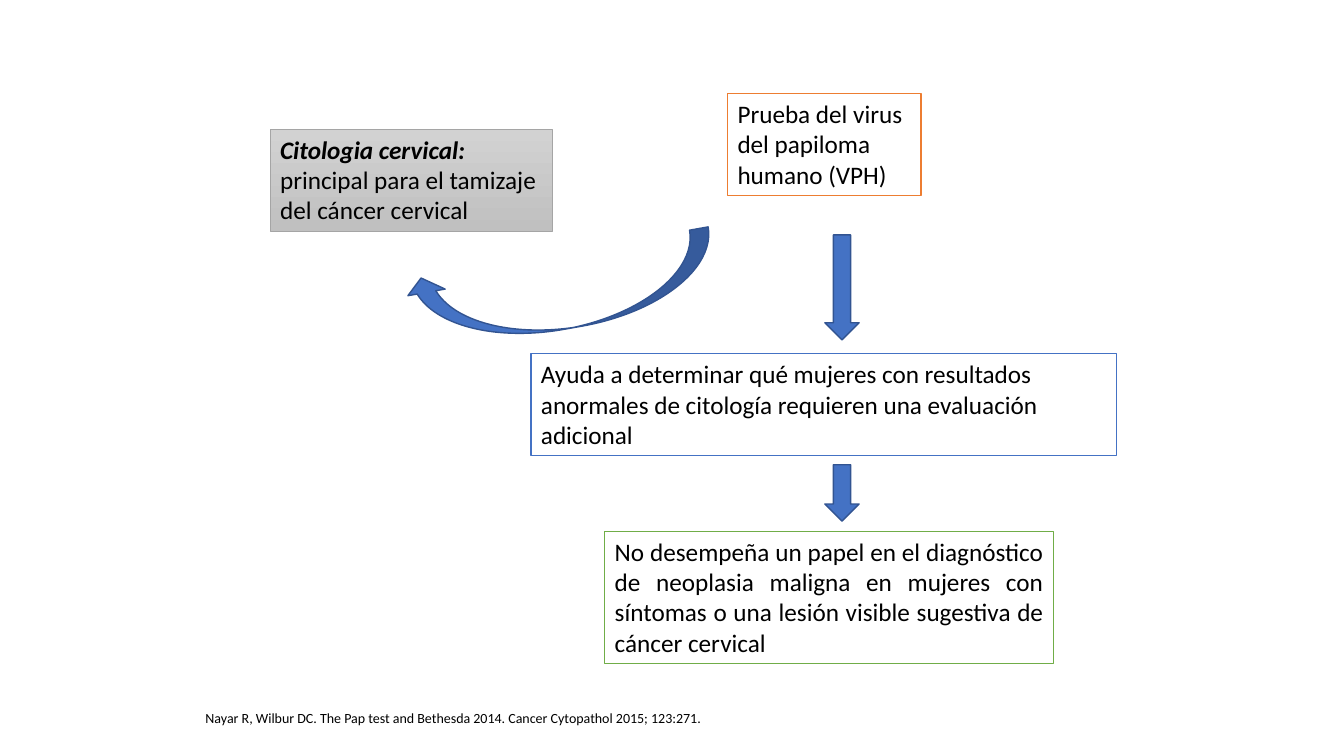
from pptx import Presentation
from pptx.dml.color import RGBColor as RGB
from pptx.enum.shapes import MSO_SHAPE as Form
from pptx.enum.text import MSO_ANCHOR as Anchor, MSO_AUTO_SIZE as Fit, PP_ALIGN as Align
from pptx.util import Pt


def hue(code):
    return RGB.from_string(code)


def write(par, text, size=18, bold=False, italic=False, align=Align.LEFT, color="000000"):
    par.alignment = align
    run = par.add_run()
    run.text = text
    font = run.font
    font.name, font.size = "Calibri", Pt(size)
    font.bold, font.italic = bold, italic
    font.color.rgb = hue(color)


class Board:
    """Draw the boxes, arrows and notes of one slide in a shared style."""

    blue, edge = "4472C4", "325491"

    def __init__(self, slide):
        self.shapes = slide.shapes

    def shape(self, form, area, line, width=1, fill="FFFFFF"):
        item = self.shapes.add_shape(form, *map(Pt, area))
        item.shadow.inherit = False
        item.fill.solid()
        item.fill.fore_color.rgb = hue(fill)
        item.line.color.rgb = hue(line)
        item.line.width = Pt(width)
        return item

    def frame(self, item):
        frame = item.text_frame
        frame.word_wrap = True
        frame.auto_size = Fit.SHAPE_TO_FIT_TEXT
        frame.vertical_anchor = Anchor.TOP
        return frame

    def box(self, area, line, text, width=1, **style):
        item = self.shape(Form.RECTANGLE, area, line, width)
        write(self.frame(item).paragraphs[0], text, **style)
        return item

    def shade(self, item, *tones):
        item.fill.gradient()
        item.fill.gradient_angle = 270
        for stop, tone in zip(item.fill.gradient_stops, tones):
            stop.color.rgb = hue(tone)

    def arrow(self, form, area, turn=0, bends=()):
        item = self.shape(form, area, self.edge, fill=self.blue)
        item.rotation = turn
        for i, bend in enumerate(bends):
            item.adjustments[i] = bend

    def note(self, area, text, **style):
        item = self.shapes.add_textbox(*map(Pt, area))
        write(self.frame(item).paragraphs[0], text, **style)


def main():
    deck = Presentation()
    deck.slide_width, deck.slide_height = Pt(960), Pt(540)
    board = Board(deck.slides.add_slide(deck.slide_layouts[6]))

    smear = board.box((193, 92.3, 201.6, 72.7), "A5A5A5", "Citologia cervical:",
                      width=0.5, bold=True, italic=True)
    board.shade(smear, "D2D2D2", "C0C0C0")
    write(smear.text_frame.add_paragraph(), "principal para el tamizaje del cáncer cervical")

    board.box((432, 379.5, 320.4, 94.5), "70AD47",
              "No desempeña un papel en el diagnóstico de neoplasia maligna en mujeres "
              "con síntomas o una lesión visible sugestiva de cáncer cervical",
              align=Align.JUSTIFY)
    board.box((379.3, 252.7, 418.3, 72.7), "4472C4",
              "Ayuda a determinar qué mujeres con resultados anormales de citología "
              "requieren una evaluación adicional")
    board.box((519.7, 66.8, 138.2, 72.7), "ED7D31",
              "Prueba del virus del papiloma humano (VPH)")

    board.arrow(Form.CURVED_LEFT_ARROW, (374.4, 97.2, 54, 221.8), 79.9, (0.25, 0.5, 0.2))
    for top, tall in ((332, 40.3), (167.8, 75)):
        board.arrow(Form.DOWN_ARROW, (589.2, top, 24.5, tall))

    board.note((139.7, 503.2, 481.7, 19.4),
               "Nayar R, Wilbur DC. The Pap test and Bethesda 2014. "
               "Cancer Cytopathol 2015; 123:271.", size=10)
    deck.save("out.pptx")


if __name__ == "__main__":
    main()
